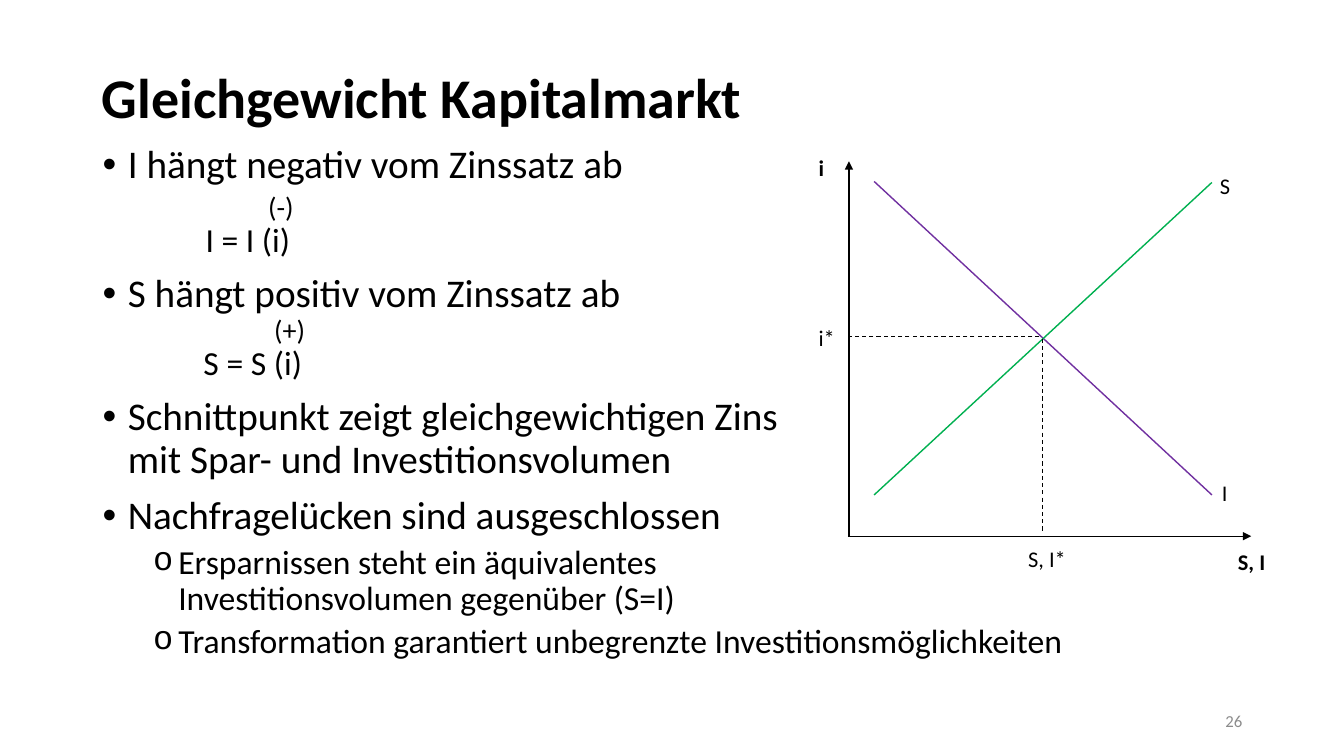
from lxml.etree import SubElement
from pptx import Presentation
from pptx.dml.color import RGBColor
from pptx.enum.dml import MSO_LINE
from pptx.enum.shapes import MSO_CONNECTOR
from pptx.enum.text import MSO_ANCHOR, PP_ALIGN
from pptx.oxml.ns import qn
from pptx.util import Inches, Pt

COLORS = {
    "text": "000000",
    "number": "8C8C8C",
    "investment": "7030A0",
    "saving": "00B050",
}
FONT = "Calibri"


def rgb(name):
    return RGBColor.from_string(COLORS[name])


def write_text(para, text, size=16, bold=False, color="text", align=PP_ALIGN.LEFT,
               spacing=None, before=0, left=0, hanging=0, bullet=None):
    para.text = text
    para.alignment = align
    para.line_spacing = spacing
    para.space_before = Pt(before)
    properties = para._p.get_or_add_pPr()
    properties.set("marL", str(Inches(left)))
    properties.set("indent", str(Inches(-hanging)))
    if bullet:
        SubElement(properties, qn("a:buFont"), typeface="Arial" if bullet == "•" else "Courier New")
        SubElement(properties, qn("a:buChar"), char=bullet)
    for span in para.runs:
        span.font.name = FONT
        span.font.size = Pt(size)
        span.font.bold = bold
        span.font.color.rgb = rgb(color)


def add_box(page, left, top, width, height, anchor=MSO_ANCHOR.TOP):
    box = page.shapes.add_textbox(Inches(left), Inches(top), Inches(width), Inches(height))
    box.text_frame.word_wrap = True
    box.text_frame.vertical_anchor = anchor
    return box.text_frame


def add_label(page, text, left, top, width=0.63, bold=False):
    write_text(add_box(page, left, top, width, 0.37).paragraphs[0], text, bold=bold)


def add_line(page, start, end, color="text", width=1, dashed=False, arrow=False):
    line = page.shapes.add_connector(
        MSO_CONNECTOR.STRAIGHT, *(Inches(value) for value in (*start, *end)))
    line.line.color.rgb = rgb(color)
    line.line.width = Pt(width)
    if dashed:
        line.line.dash_style = MSO_LINE.DASH
    if arrow:
        SubElement(line.line._get_or_add_ln(), qn("a:tailEnd"), type="triangle")
    SubElement(line._element.spPr, qn("a:effectLst"))


def add_title(page, text):
    title = page.shapes.title
    title.left, title.top = Inches(0.91), Inches(0.21)
    title.width, title.height = Inches(11.5), Inches(1.57)
    title.text_frame.vertical_anchor = MSO_ANCHOR.MIDDLE
    write_text(title.text_frame.paragraphs[0], text, size=40, bold=True, spacing=0.9)


def add_body(page):
    point = {"size": 28, "before": 10, "left": 0.25, "hanging": 0.25, "bullet": "•"}
    detail = {"size": 24, "before": 5, "left": 0.75, "hanging": 0.25, "bullet": "o"}
    lines = [
        ("I hängt negativ vom Zinssatz ab", {**point, "before": 0}),
        ("(-)", {"size": 20, "left": 1.64, "before": 4.4}),
        ("I = I (i)", {"size": 24, "left": 1.02}),
        ("S hängt positiv vom Zinssatz ab", point),
        ("(+)", {"size": 20, "left": 1.7}),
        ("S = S (i)", {"size": 24, "left": 1}),
        ("Schnittpunkt zeigt gleichgewichtigen Zins\vmit Spar- und Investitionsvolumen", point),
        ("Nachfragelücken sind ausgeschlossen", point),
        ("Ersparnissen steht ein äquivalentes\vInvestitionsvolumen gegenüber (S=I)", detail),
        ("Transformation garantiert unbegrenzte Investitionsmöglichkeiten", detail),
    ]
    frame = add_box(page, 0.92, 1.39, 11.5, 5.38)
    for index, (text, style) in enumerate(lines):
        para = frame.add_paragraph() if index else frame.paragraphs[0]
        write_text(para, text, spacing=0.9, **style)


def add_market_diagram(page):
    add_line(page, (8.42, 5.32), (8.42, 1.6), arrow=True)
    add_line(page, (8.41, 5.32), (12.41, 5.32), arrow=True)
    add_line(page, (8.67, 1.8), (12.02, 4.91), color="investment")
    add_line(page, (8.67, 4.91), (12.02, 1.81), color="saving")
    add_line(page, (10.31, 3.34), (8.42, 3.34), width=0.75, dashed=True)
    add_line(page, (10.34, 3.36), (10.34, 5.29), width=0.75, dashed=True)
    add_label(page, "i", 8.02, 1.48, width=0.4, bold=True)
    add_label(page, "S, I", 12.18, 5.39, bold=True)
    add_label(page, "i*", 8.02, 3.17, width=0.77)
    add_label(page, "S, I*", 10.1, 5.36)
    add_label(page, "S", 12, 1.66)
    add_label(page, "I", 12.02, 4.7)


def main():
    deck = Presentation()
    deck.slide_width, deck.slide_height = Inches(13.33), Inches(7.5)
    page = deck.slides.add_slide(deck.slide_layouts.get_by_name("Title Only"))
    add_title(page, "Gleichgewicht Kapitalmarkt")
    add_body(page)
    number = add_box(page, 9.42, 6.95, 3, 0.4, anchor=MSO_ANCHOR.MIDDLE)
    write_text(number.paragraphs[0], "26", size=12, color="number", align=PP_ALIGN.RIGHT)
    add_market_diagram(page)
    deck.save("out.pptx")


if __name__ == "__main__":
    main()
